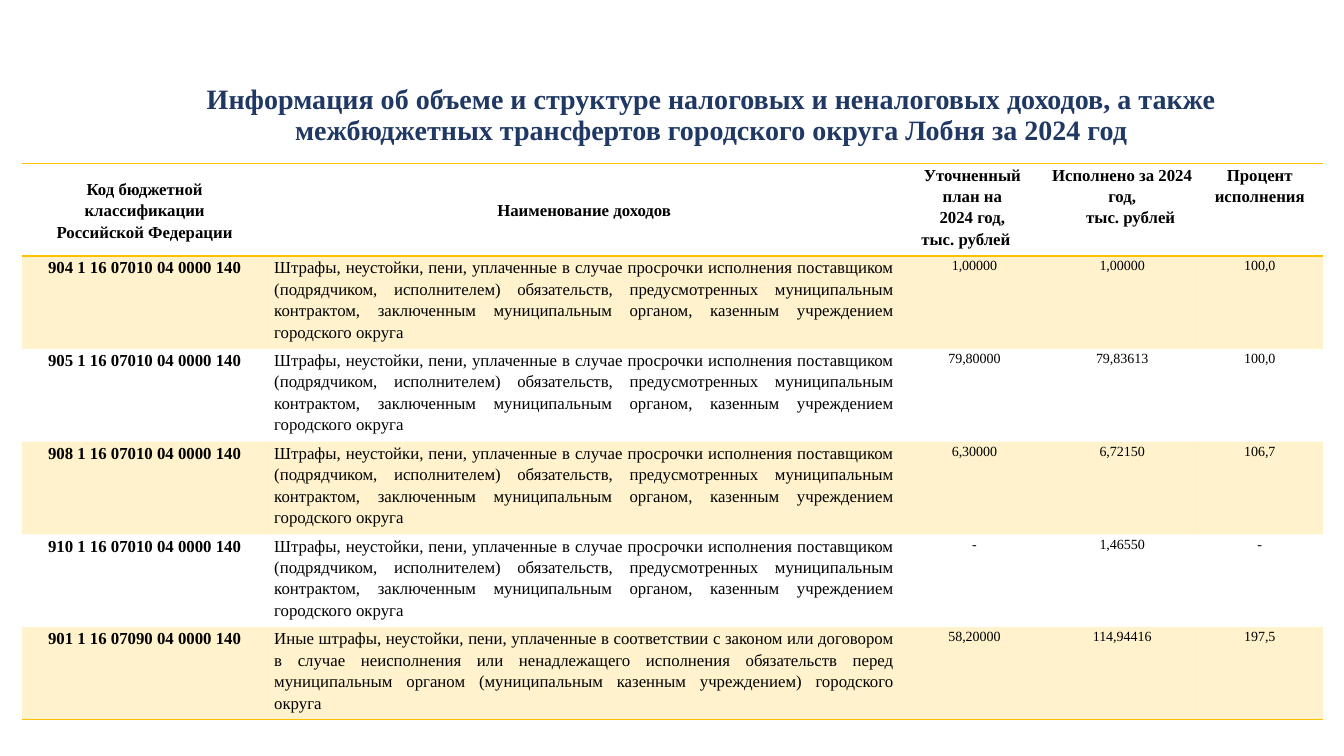
from pptx import Presentation, util as u
from pptx.dml.color import RGBColor
from pptx.enum import text
from pptx.oxml.ns import qn
from lxml import etree

FONT = "Times New Roman"
NAVY = RGBColor(0x20, 0x38, 0x64)
BLACK = RGBColor(0, 0, 0)
GOLD = RGBColor(0xFF, 0xC0, 0x00)
NO_STYLE = "{2D5ABB26-0587-4C30-8999-92F81FD0307C}"
CENTER, JUSTIFY = text.PP_ALIGN.CENTER, text.PP_ALIGN.JUSTIFY
MIDDLE, TOP = text.MSO_ANCHOR.MIDDLE, text.MSO_ANCHOR.TOP

TITLE = ("Информация об объеме и структуре налоговых и неналоговых доходов, а также "
         "межбюджетных трансфертов городского округа Лобня за 2024 год")
COLUMNS = [2.43, 6.29, 1.45, 1.48, 1.25]
HEADER_HEIGHT, ROW_HEIGHT = 0.8, 0.91
HEADERS = [
    "Код бюджетной классификации\nРоссийской Федерации",
    "Наименование доходов",
    "Уточненный \nплан на \n2024 год, \nтыс. рублей",
    "Исполнено за 2024 год,\nтыс. рублей",
    "Процент исполнения",
]
LATE_SUPPLY = ("Штрафы, неустойки, пени, уплаченные в случае просрочки исполнения поставщиком "
               "(подрядчиком, исполнителем) обязательств, предусмотренных муниципальным контрактом, "
               "заключенным муниципальным органом, казенным учреждением городского округа")
OTHER_FINES = ("Иные штрафы, неустойки, пени, уплаченные в соответствии с законом или договором "
               "в случае неисполнения или ненадлежащего исполнения обязательств перед муниципальным "
               "органом (муниципальным казенным учреждением) городского округа")
INCOME = [
    ("904 1 16 07010 04 0000 140", LATE_SUPPLY, "1,00000", "1,00000", "100,0"),
    ("905 1 16 07010 04 0000 140", LATE_SUPPLY, "79,80000", "79,83613", "100,0"),
    ("908 1 16 07010 04 0000 140", LATE_SUPPLY, "6,30000", "6,72150", "106,7"),
    ("910 1 16 07010 04 0000 140", LATE_SUPPLY, "-", "1,46550", "-"),
    ("901 1 16 07090 04 0000 140", OTHER_FINES, "58,20000", "114,94416", "197,5"),
]


def style_text(frame, size, bold, color, align, spacing):
    for para in frame.paragraphs:
        para.alignment = align
        para.line_spacing = spacing
        for span in para.runs:
            span.font.name = FONT
            span.font.size = u.Pt(size)
            span.font.bold = bold
            span.font.color.rgb = color
        ending = etree.SubElement(para._p, qn("a:endParaRPr"), sz=str(size * 100))
        etree.SubElement(ending, qn("a:latin"), typeface=FONT)


def add_border(cell, side, color):
    line = etree.SubElement(cell._tc.get_or_add_tcPr(), qn(f"a:{side}"), w=str(u.Pt(1)))
    fill = etree.SubElement(line, qn("a:solidFill"))
    etree.SubElement(fill, qn("a:srgbClr"), val=str(color))


def tint(cell, color, percent):
    cell.fill.solid()
    cell.fill.fore_color.rgb = color
    shade = cell._tc.tcPr.find(qn("a:solidFill")).find(qn("a:srgbClr"))
    etree.SubElement(shade, qn("a:alpha"), val=str(percent * 1000))


def fill_cell(cell, content, size, bold, align, anchor, side_margin):
    cell.margin_left = cell.margin_right = u.Inches(side_margin)
    cell.margin_top = cell.margin_bottom = 0
    cell.vertical_anchor = anchor
    cell.text_frame.text = content
    style_text(cell.text_frame, size, bold, BLACK, align, 1.15)


def add_title(page, left, top, width, height):
    box = page.shapes.add_textbox(*map(u.Inches, (left, top, width, height)))
    frame = box.text_frame
    frame.word_wrap = True
    frame.vertical_anchor = MIDDLE
    frame.text = TITLE
    style_text(frame, 20, True, NAVY, CENTER, 0.9)


def add_header(table):
    for column, label in enumerate(HEADERS):
        cell = table.cell(0, column)
        fill_cell(cell, label, 12, True, CENTER, MIDDLE if column < 2 else TOP, 0.04)
        for side in ("lnT", "lnB"):
            add_border(cell, side, GOLD)
        cell.fill.background()
    for column, attribute in ((2, "marR"), (3, "marL")):
        last = table.cell(0, column).text_frame.paragraphs[-1]
        last._p.get_or_add_pPr().set(attribute, str(u.Inches(0.17)))


def add_income_row(table, number, values):
    for column, value in enumerate(values):
        cell = table.cell(number, column)
        fill_cell(cell, value, 12 if column < 2 else 10, column == 0,
                  JUSTIFY if column == 1 else CENTER, TOP, 0.07)
        if number == len(INCOME):
            add_border(cell, "lnB", GOLD)
        if number % 2:
            tint(cell, GOLD, 20)
        else:
            cell.fill.background()


def add_income_table(page, left, top):
    height = HEADER_HEIGHT + ROW_HEIGHT * len(INCOME)
    frame = page.shapes.add_table(len(INCOME) + 1, len(COLUMNS), u.Inches(left), u.Inches(top),
                                  u.Inches(sum(COLUMNS)), u.Inches(height))
    table = frame.table
    table.first_row = table.horz_banding = False
    table._tbl.tblPr.find(qn("a:tableStyleId")).text = NO_STYLE
    for column, width in zip(table.columns, COLUMNS):
        column.width = u.Inches(width)
    for number, row in enumerate(table.rows):
        row.height = u.Inches(ROW_HEIGHT if number else HEADER_HEIGHT)
    add_header(table)
    for number, values in enumerate(INCOME, 1):
        add_income_row(table, number, values)


def main():
    deck = Presentation()
    deck.slide_width, deck.slide_height = u.Inches(13.33), u.Inches(7.5)
    page = deck.slides.add_slide(deck.slide_layouts[6])
    add_title(page, 1.67, 0.67, 10.77, 0.96)
    add_income_table(page, 0.22, 1.62)
    deck.save("out.pptx")


if __name__ == "__main__":
    main()
